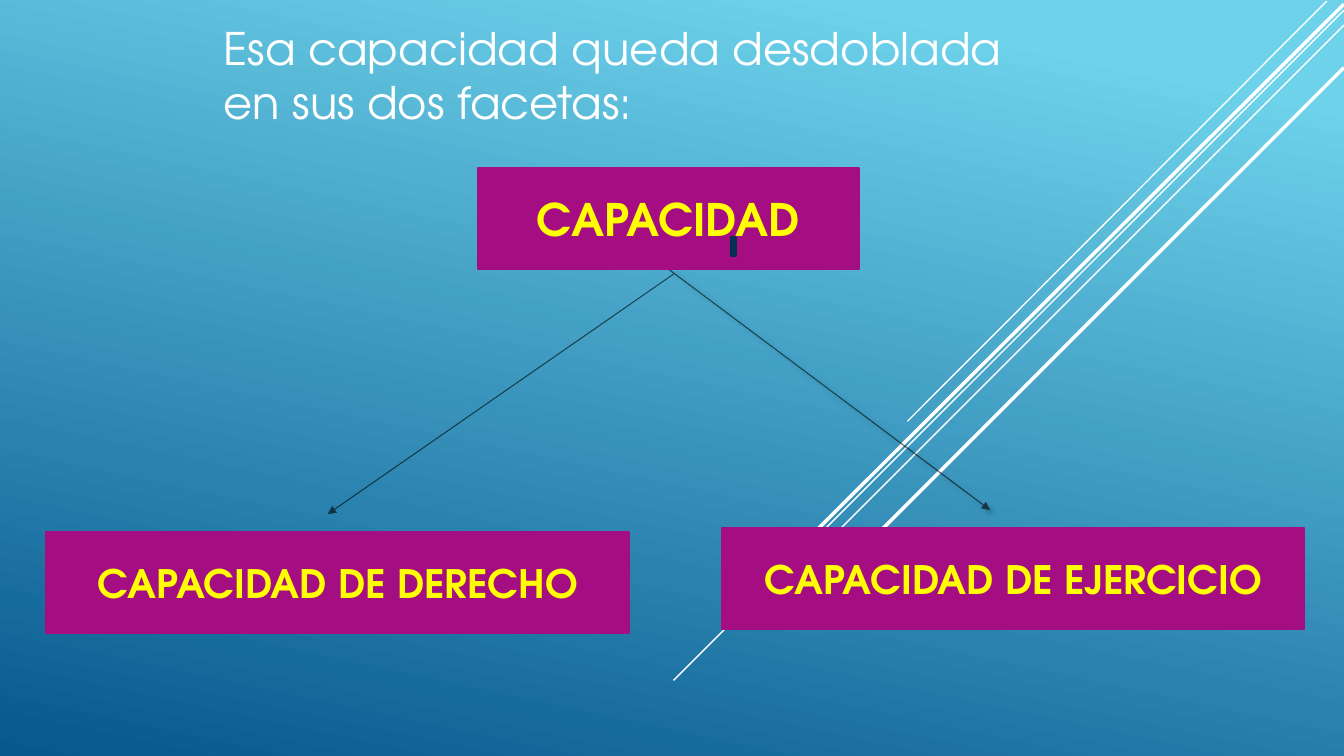
from dataclasses import dataclass

from lxml import etree
from pptx import Presentation
from pptx.dml.color import RGBColor
from pptx.enum.shapes import MSO_CONNECTOR, MSO_SHAPE
from pptx.enum.text import MSO_ANCHOR, MSO_AUTO_SIZE, PP_ALIGN
from pptx.oxml.ns import qn
from pptx.util import Inches, Pt

STRAIGHT = MSO_CONNECTOR.STRAIGHT
RECTANGLE = MSO_SHAPE.RECTANGLE
TOP, MIDDLE = MSO_ANCHOR.TOP, MSO_ANCHOR.MIDDLE
LEFT, CENTER = PP_ALIGN.LEFT, PP_ALIGN.CENTER
GROW = MSO_AUTO_SIZE.SHAPE_TO_FIT_TEXT
TITLE_ONLY = 5
BOTTOM_SIDE = 2


@dataclass(frozen=True)
class Theme:
    font: str = "TeX Gyre Adventor"
    sky: str = "6ED2EB"
    deep: str = "06588E"
    white: str = "FFFFFF"
    black: str = "000000"
    magenta: str = "A50E82"
    yellow: str = "FFFF00"
    navy: str = "052F61"
    navy_edge: str = "043148"
    large: int = 32
    medium: int = 28


THEME = Theme()

RAYS = [
    ((13.16, 0.01), (9, 4.18), 1),
    ((13.33, 0.1), (6.68, 6.75), 1),
    ((13.33, 0.25), (7.91, 5.67), 1),
    ((13.33, 0.04), (8.02, 5.34), 2.5),
    ((13.33, 0.67), (8.58, 5.42), 2.5),
]


def color(code):
    return RGBColor.from_string(code)


def paint_background(page):
    fill = page.background.fill
    fill.gradient()
    fill.gradient_angle = 360 - 102
    for stop, position, code in zip(
        fill.gradient_stops, (0.1, 1), (THEME.sky, THEME.deep)
    ):
        stop.position = position
        stop.color.rgb = color(code)


def add_line(page, start, end, code, width):
    line = page.shapes.add_connector(
        STRAIGHT, *(Inches(value) for value in (*start, *end))
    )
    line.line.color.rgb = color(code)
    line.line.width = Pt(width)
    etree.SubElement(line._element.spPr, qn("a:effectLst"))
    return line


def add_arrow(page, start, end):
    arrow = add_line(page, start, end, THEME.black, 0.75)
    outline = arrow._element.spPr.find(qn("a:ln"))
    shade = outline.find(qn("a:solidFill"))[0]
    etree.SubElement(shade, qn("a:alpha"), val="60000")
    etree.SubElement(outline, qn("a:tailEnd"), type="triangle")
    return arrow


def add_soft_shadow(arrow):
    effects = arrow._element.spPr.find(qn("a:effectLst"))
    shadow = etree.SubElement(
        effects,
        qn("a:outerShdw"),
        blurRad=str(Pt(4)),
        dist=str(Pt(3)),
        dir=str(45 * 60000),
    )
    shade = etree.SubElement(shadow, qn("a:srgbClr"), val=THEME.black)
    etree.SubElement(shade, qn("a:alpha"), val="40000")


def format_text(para, size, code, align, bold=False):
    para.alignment = align
    para.font.name = THEME.font
    para.font.size = Pt(size)
    para.font.bold = bold
    para.font.color.rgb = color(code)


def add_title(page, text):
    title = page.shapes.title
    title.left, title.top = Inches(2.12), Inches(0.16)
    title.width, title.height = Inches(8.51), Inches(1.18)
    frame = title.text_frame
    frame.text = text
    frame.word_wrap = True
    frame.auto_size = GROW
    frame.vertical_anchor = TOP
    format_text(frame.paragraphs[0], THEME.large, THEME.white, LEFT)


def add_rectangle(page, left, top, width, height, fill, edge):
    box = page.shapes.add_shape(
        RECTANGLE, Inches(left), Inches(top), Inches(width), Inches(height)
    )
    box.shadow.inherit = False
    box.fill.solid()
    box.fill.fore_color.rgb = color(fill)
    box.line.color.rgb = color(edge)
    box.line.width = Pt(1.25)
    return box


def add_concept(page, text, left, top, width, size):
    box = add_rectangle(page, left, top, width, 1, THEME.magenta, THEME.magenta)
    frame = box.text_frame
    frame.text = text
    frame.word_wrap = True
    frame.vertical_anchor = MIDDLE
    format_text(frame.paragraphs[0], size, THEME.yellow, CENTER, bold=True)
    return box


def main():
    deck = Presentation()
    deck.slide_width, deck.slide_height = Inches(13.33), Inches(7.5)
    page = deck.slides.add_slide(deck.slide_layouts[TITLE_ONLY])
    paint_background(page)
    for start, end, width in RAYS:
        add_line(page, start, end, THEME.white, width)

    to_exercise = add_arrow(page, (6.63, 2.67), (9.82, 5.06))
    add_soft_shadow(to_exercise)
    add_arrow(page, (6.68, 2.72), (3.25, 5.1))

    add_title(page, "Esa capacidad queda desdoblada en sus dos facetas:")
    capacity = add_concept(page, "CAPACIDAD", 4.74, 1.67, 3.78, THEME.large)
    heading = capacity.text_frame.paragraphs[0]
    heading.space_before, heading.space_after = Pt(6.4), Pt(6)
    to_exercise.begin_connect(capacity, BOTTOM_SIDE)

    add_rectangle(page, 7.25, 2.35, 0.05, 0.19, THEME.navy, THEME.navy_edge)
    add_concept(page, "CAPACIDAD DE DERECHO", 0.46, 5.28, 5.78, THEME.medium)
    add_concept(page, "CAPACIDAD DE EJERCICIO", 7.16, 5.24, 5.78, THEME.medium)
    deck.save("out.pptx")


if __name__ == "__main__":
    main()
